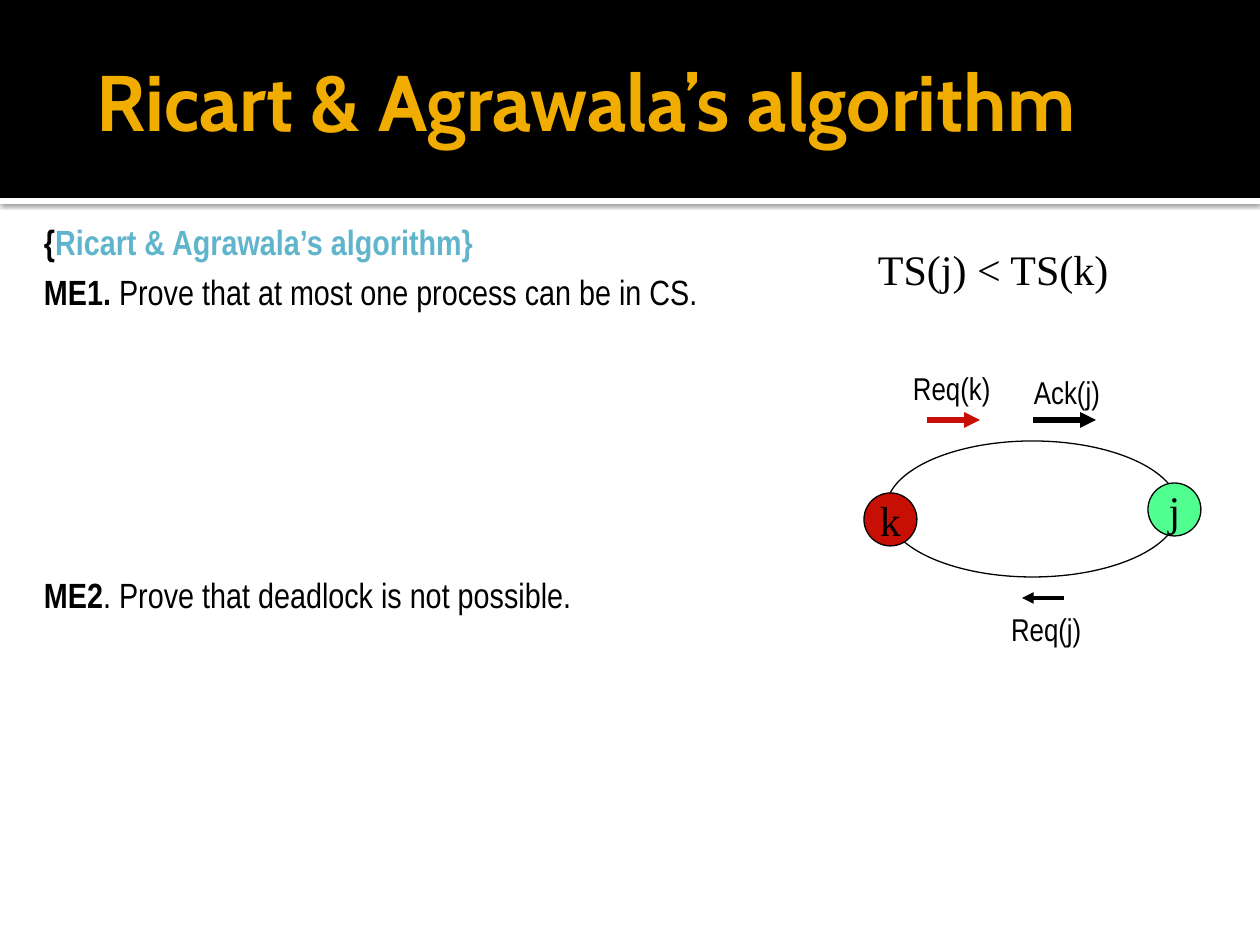
from dataclasses import dataclass

from lxml.etree import SubElement
from pptx import Presentation
from pptx.dml.color import RGBColor
from pptx.enum.shapes import MSO_CONNECTOR, MSO_SHAPE
from pptx.enum.text import MSO_ANCHOR, MSO_AUTO_SIZE, PP_ALIGN
from pptx.oxml.ns import qn
from pptx.util import Emu, Pt

PX_PER_INCH = 126


def px(n: int) -> Emu:
    return Emu(round(n * 914400 / PX_PER_INCH))


@dataclass(frozen=True)
class Theme:
    black: str = "000000"
    white: str = "FFFFFF"
    gold: str = "F0AD00"
    blue: str = "60B5CC"
    red: str = "C70F05"
    green: str = "51FF91"
    title_font: str = "Cabin"
    body_font: str = "Arial Narrow"
    math_font: str = "Times New Roman"
    title_size: int = 45
    math_size: int = 24
    body_size: int = 20
    label_size: int = 18


THEME = Theme()


@dataclass(frozen=True)
class Box:
    x: int
    y: int
    w: int
    h: int

    def emu(self) -> tuple:
        return px(self.x), px(self.y), px(self.w), px(self.h)


@dataclass(frozen=True)
class Node:
    text: str
    box: Box
    fill: str


@dataclass(frozen=True)
class Arrow:
    x1: int
    x2: int
    y: int
    color: str
    width: float


@dataclass(frozen=True)
class Label:
    text: str
    box: Box


@dataclass(frozen=True)
class Run:
    text: str
    bold: bool = False
    color: str = THEME.black


NODES = [
    Node("k", Box(864, 493, 53, 53), THEME.red),
    Node("j", Box(1148, 483, 53, 53), THEME.green),
]
ARROWS = [
    Arrow(1033, 1096, 420, THEME.black, 3),
    Arrow(1064, 1022, 598, THEME.black, 2.25),
    Arrow(927, 980, 420, THEME.red, 3),
]
LABELS = [
    Label("Req(j)", Box(999, 604, 96, 50)),
    Label("Ack(j)", Box(1022, 367, 92, 50)),
    Label("Req(k)", Box(901, 363, 103, 50)),
]
PROOFS = [
    [Run("{", True), Run("Ricart & Agrawala’s algorithm}", True, THEME.blue)],
    [Run("ME1. ", True), Run("Prove that at most one process can be in CS.")],
    [Run("ME2", True), Run(". Prove that deadlock is not possible.")],
]
LINE_PITCH = 28.8
PROOF_GAPS = [0, 0, 5 * LINE_PITCH]  # room for the first proof, in points


def write(tf, paragraphs: list, *, font: str, size: int, align=PP_ALIGN.LEFT,
          anchor=MSO_ANCHOR.TOP, wrap: bool = True, fit=MSO_AUTO_SIZE.NONE,
          insets: tuple = (13, 6, 13, 6), pitch: float = 0, gaps: list = ()) -> None:
    """Fill a text frame; each paragraph is a list of runs."""
    tf.word_wrap, tf.auto_size, tf.vertical_anchor = wrap, fit, anchor
    tf.margin_left, tf.margin_top, tf.margin_right, tf.margin_bottom = map(px, insets)
    for i, runs in enumerate(paragraphs):
        p = tf.paragraphs[0] if i == 0 else tf.add_paragraph()
        p.alignment = align
        if pitch:
            p.line_spacing = Pt(pitch)
        if gaps:
            p.space_before = Pt(gaps[i])
        for run in runs:
            r = p.add_run()
            r.text = run.text
            r.font.name, r.font.size, r.font.bold = font, Pt(size), run.bold
            r.font.color.rgb = RGBColor.from_string(run.color)


def add_text(s, box: Box, paragraphs: list, **style):
    sp = s.shapes.add_textbox(*box.emu())
    write(sp.text_frame, paragraphs, **style)
    return sp


def add_figure(s, kind, box: Box, fill: str = "", line: str = ""):
    sp = s.shapes.add_shape(kind, *box.emu())
    sp.shadow.inherit = False
    if fill:
        sp.fill.solid()
        sp.fill.fore_color.rgb = RGBColor.from_string(fill)
    else:
        sp.fill.background()
    if line:
        sp.line.color.rgb = RGBColor.from_string(line)
        sp.line.width = Pt(0.75)
    else:
        sp.line.fill.background()
    return sp


def add_drop_shadow(sp) -> None:
    effects = sp.element.spPr.find(qn("a:effectLst"))
    shadow = SubElement(effects, qn("a:outerShdw"), blurRad=str(Pt(2.5)),
                        dist=str(Pt(0.8)), dir="5400000", algn="tl", rotWithShape="0")
    color = SubElement(shadow, qn("a:srgbClr"), val=THEME.black)
    SubElement(color, qn("a:alpha"), val="60000")


def add_arrow(s, arrow: Arrow) -> None:
    y = px(arrow.y)
    c = s.shapes.add_connector(MSO_CONNECTOR.STRAIGHT, px(arrow.x1), y, px(arrow.x2), y)
    c.line.color.rgb = RGBColor.from_string(arrow.color)
    c.line.width = Pt(arrow.width)
    SubElement(c.element.spPr.find(qn("a:ln")), qn("a:tailEnd"), type="triangle")
    SubElement(c.element.spPr, qn("a:effectLst"))


def add_node(s, node: Node) -> None:
    sp = add_figure(s, MSO_SHAPE.OVAL, node.box, node.fill, THEME.black)
    write(sp.text_frame, [[Run(node.text)]], font=THEME.math_font, size=THEME.math_size,
          align=PP_ALIGN.CENTER, anchor=MSO_ANCHOR.MIDDLE, wrap=False)


def add_label(s, label: Label) -> None:
    """The narrow right inset leaves slack, so the text stays on one line."""
    add_text(s, label.box, [[Run(label.text)]], font=THEME.body_font,
             size=THEME.label_size, wrap=False, insets=(12, 6, 4, 6))


def add_header(s) -> None:
    title = s.shapes.title
    rule = add_figure(s, MSO_SHAPE.RECTANGLE, Box(0, 198, 1260, 6), THEME.white)
    add_drop_shadow(rule)
    band = add_figure(s, MSO_SHAPE.RECTANGLE, Box(0, 0, 1260, 198), THEME.black)
    for sp in (rule, band):
        title.element.addprevious(sp.element)
    title.left, title.top, title.width, title.height = Box(84, 21, 1071, 158).emu()
    write(title.text_frame, [[Run("Ricart & Agrawala’s algorithm", True, THEME.gold)]],
          font=THEME.title_font, size=THEME.title_size, anchor=MSO_ANCHOR.MIDDLE,
          insets=(13, 6, 6, 6))


def main() -> None:
    prs = Presentation()
    prs.slide_width, prs.slide_height = px(1260), px(945)
    s = prs.slides.add_slide(prs.slide_layouts[5])
    add_header(s)
    add_text(s, Box(31, 199, 819, 714), PROOFS, font=THEME.body_font,
             size=THEME.body_size, align=PP_ALIGN.JUSTIFY, insets=(13, 13, 13, 6),
             pitch=LINE_PITCH, gaps=PROOF_GAPS)
    add_text(s, Box(833, 231, 427, 567), [[Run("TS(j) < TS(k)")]],
             font=THEME.math_font, size=THEME.math_size, insets=(45, 13, 13, 6))
    add_figure(s, MSO_SHAPE.OVAL, Box(886, 441, 293, 136), line=THEME.black)
    for node in NODES:
        add_node(s, node)
    for arrow in ARROWS:
        add_arrow(s, arrow)
    for label in LABELS:
        add_label(s, label)
    prs.save("out.pptx")


if __name__ == "__main__":
    main()
